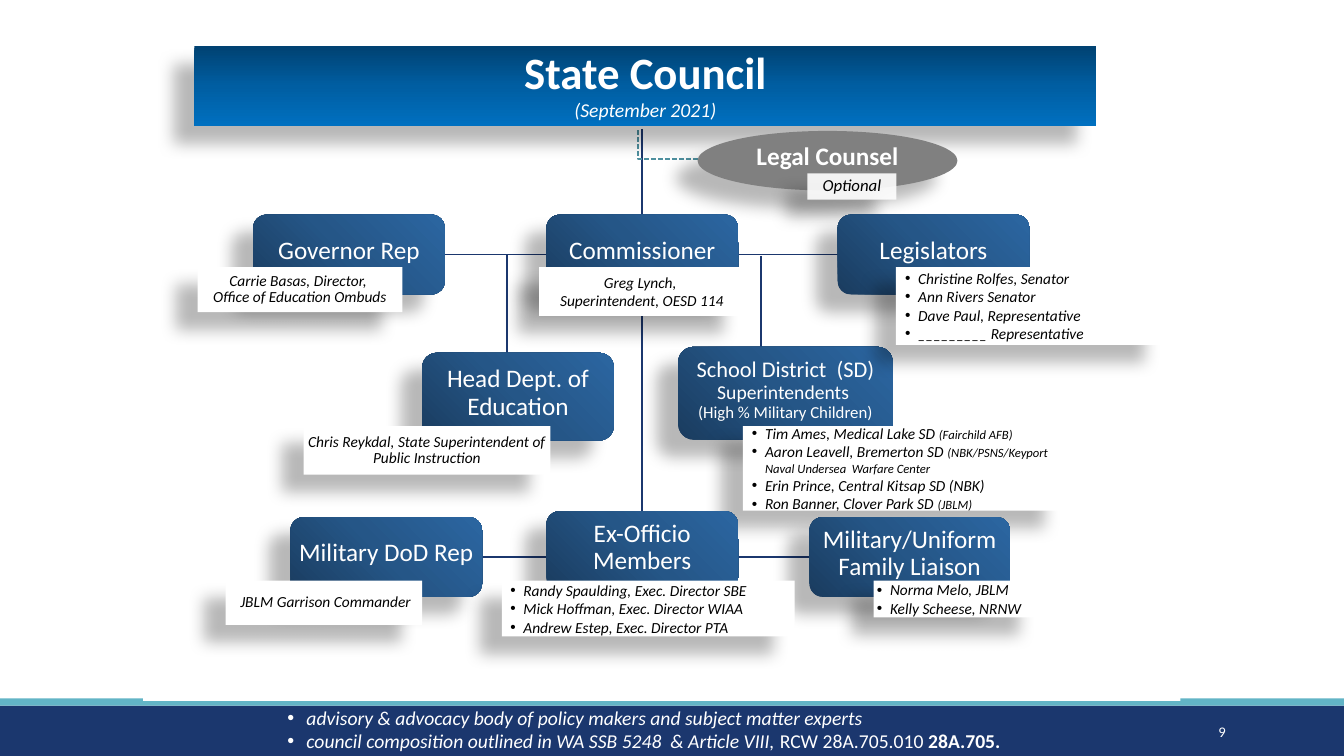
from lxml import etree
from pptx import Presentation
from pptx.dml.color import RGBColor
from pptx.enum import dml, shapes, text
from pptx.oxml import ns
from pptx.util import Cm, Pt

NAVY, TEAL, WHITE, BLACK = "1B376E", "62B4C6", "FFFFFF", "000000"
DEEP = ("004272", "005EA2", "0070C0")
STEEL = ("1A3C5F", "255687", "2B66A1")
WIDE, TALL = 4.83, 2.01
ROW, LOW, SUB, FOOT = 5.41, 13.03, 6.73, 14.63

HEAD = [[("State Council", 32, "b")], [("(September 2021)", 14, "i")]]
DUTY = [
    ["advisory & advocacy body of policy makers and subject matter experts"],
    ["council composition outlined in WA SSB 5248  & Article VIII, ",
     ("RCW 28A.705.010 ", 14, ""), ("28A.705.", 14, "b")],
]

CARDS = [
    ("Head", (10.64, 8.89, WIDE, 2.21), ["Head Dept. of Education"]),
    ("School", (17.09, 8.74, 5.41, 2.34),
     [("School District  (SD) ", 16, ""), ("Superintendents ", 14, ""), "\v",
      ("(High % Military Children)", 12, "")]),
    ("DoD", (7.32, LOW, WIDE, TALL), ["Military DoD Rep"]),
    ("Family", (20.4, LOW, 5.05, TALL), ["Military/Uniform Family Liaison"]),
    ("Members", (13.77, 12.88, WIDE, TALL), ["Ex-Officio Members"]),
    ("Legal", (17.58, 3.3, 6.55, 1.5), [("Legal Counsel", 18, "b")]),
    ("Governor", (6.38, ROW, WIDE, TALL), ["Governor Rep"]),
    ("Chief", (13.77, ROW, WIDE, TALL), ["Commissioner"]),
    ("Law", (21.11, ROW, WIDE, TALL), ["Legislators"]),
]

NOTES = {
    "Head": ((7.65, 10.74, 6.22, 1.22), 0, 0.9,
             [["Chris Reykdal, State Superintendent of Public Instruction"]]),
    "School": ((18.72, 10.74, 8.13, 2.13), 0.48, 1, [
        ["Tim Ames, Medical Lake SD ", ("(Fairchild AFB)", 9, "i")],
        ["Aaron Leavell, Bremerton SD ",
         ("(NBK/PSNS/Keyport Naval Undersea  Warfare Center", 9, "i")],
        ["Erin Prince, Central Kitsap SD (NBK)"],
        ["Ron Banner, Clover Park SD ", ("(JBLM)", 9, "i")]]),
    "DoD": ((5.69, FOOT, 4.95, 1.12), 0, 0.9, [[" JBLM Garrison Commander"]]),
    "Family": ((22.02, FOOT, 4.19, 0.93), 0.33, 1,
               [["Norma Melo, JBLM"], ["Kelly Scheese, NRNW"]]),
    "Members": ((12.65, FOOT, 7.38, 1.41), 0.46, 1, [
        ["Randy Spaulding, Exec. Director SBE"],
        ["Mick Hoffman, Exec. Director WIAA"],
        ["Andrew Estep, Exec. Director PTA"]]),
    "Legal": ((20.35, 4.37, 2.24, 0.66), 0, 0.9, [[("Optional", 12, "i")]]),
    "Governor": ((4.98, SUB, 5.16, 1.14), 0, 0.9,
                 [["Carrie Basas, Director, ", "\v", "Office of Education Ombuds"]]),
    "Chief": ((13.59, SUB, 5.18, 1.23), 0, 1,
              [["Greg Lynch, "], ["Superintendent, OESD 114"]]),
    "Law": ((22.58, SUB, 6.8, 1.96), 0.48, 1, [
        ["Christine Rolfes, Senator"], ["Ann Rivers Senator"],
        ["Dave Paul, Representative"], ["_________ Representative"]]),
}

LINES = [
    (11.86, 14.03, 20.4, 14.03),
    (19.18, 6.45, 19.18, 8.76),
    (12.78, 6.43, 12.78, 9.35),
    (11.2, 6.42, 21.11, 6.42),
    (16.18, 3.25, 16.18, 16),
]
JOINS = [(0, "DoD", "Family"), (3, "Governor", "Law")]


def hue(code):
    return RGBColor.from_string(code)


def sub(node, tag, **attrs):
    return etree.SubElement(node, ns.qn(tag), {k: str(v) for k, v in attrs.items()})


def paint(shape, code):
    shape.fill.solid()
    shape.fill.fore_color.rgb = hue(code)
    shape.line.fill.background()


def blend(shape, codes, angle):
    shape.fill.gradient()
    shape.fill.gradient_angle = 360 - angle
    stops = shape.fill._fill._gradFill.find(ns.qn("a:gsLst"))
    for old in list(stops):
        stops.remove(old)
    for i, code in enumerate(codes):
        sub(sub(stops, "a:gs", pos=i * 50000), "a:srgbClr", val=code)
    shape.line.fill.background()


def shade(shape):
    for old in shape._element.spPr.findall(ns.qn("a:effectLst")):
        shape._element.spPr.remove(old)
    glow = sub(sub(shape._element.spPr, "a:effectLst"), "a:outerShdw", blurRad=Pt(11.8),
               dist=Pt(19.7), dir=141 * 60000, algn="ctr", rotWithShape=0)
    sub(sub(glow, "a:srgbClr", val=BLACK), "a:alpha", val=28000)


def place(shape, spot):
    shape.left, shape.top, shape.width, shape.height = [Cm(v) for v in spot]


def add(kind, spot):
    shape = page.shapes.add_shape(kind, *[Cm(v) for v in spot])
    shape.shadow.inherit = False
    return shape


def inset(frame, side, low):
    frame.margin_left = frame.margin_right = Cm(side)
    frame.margin_top, frame.margin_bottom = Cm(0.03), Cm(low)
    frame.vertical_anchor = text.MSO_ANCHOR.MIDDLE


def write(frame, paras, size, style, code, align, gap=1, dent=0, hang=0.33):
    frame.word_wrap = True
    for i, parts in enumerate(paras):
        para = frame.add_paragraph() if i else frame.paragraphs[0]
        para.alignment, para.line_spacing = align, gap
        para.space_before = Pt(0)
        if dent:
            props = para._p.get_or_add_pPr()
            props.set("marL", str(Cm(dent)))
            props.set("indent", str(-Cm(hang)))
            sub(props, "a:buFont", typeface="Arial")
            sub(props, "a:buChar", char="•")
        for part in parts:
            if part == "\v":
                para.add_line_break()
                continue
            word, points, look = part if isinstance(part, tuple) else (part, size, style)
            run = para.add_run()
            run.text = word
            font = run.font
            font.name, font.size = "Calibri", Pt(points)
            font.bold, font.italic = "b" in look, "i" in look
            font.color.rgb = hue(code)


deck = Presentation()
deck.slide_width, deck.slide_height = Cm(33.87), Cm(19.05)
page = deck.slides.add_slide(deck.slide_layouts[1])
kind, mid, left = shapes.MSO_SHAPE, text.PP_ALIGN.CENTER, text.PP_ALIGN.LEFT

for spot, code in [((0, 17.78, 33.87, 1.27), NAVY), ((0, 17.6, 33.87, 0.18), TEAL),
                   ((3.61, 0.64, 26.14, 17.02), WHITE)]:
    paint(add(kind.RECTANGLE, spot), code)

links = []
for ends in LINES:
    link = page.shapes.add_connector(shapes.MSO_CONNECTOR.STRAIGHT, *[Cm(v) for v in ends])
    link.line.color.rgb, link.line.width = hue(NAVY), Pt(1)
    sub(link._element.spPr, "a:effectLst")
    links.append(link)

pen = page.shapes.build_freeform(Cm(16.08), Cm(3.28))
pen.add_line_segments([(Cm(16.08), Cm(4.01)), (Cm(17.81), Cm(4.01))], close=False)
dash = pen.convert_to_shape()
dash.shadow.inherit = False
dash.fill.background()
dash.line.color.rgb, dash.line.width = hue("4E909F"), Pt(1.25)
dash.line.dash_style = dml.MSO_LINE.SQUARE_DOT

title, body = page.placeholders
tree = title._element.getparent()
tree.append(title._element)
place(title, (4.9, 1.17, 22.73, 2.01))
sub(sub(title._element.spPr, "a:prstGeom", prst="roundRect"), "a:avLst")
blend(title, DEEP, 90)
shade(title)
title.text_frame.auto_size = text.MSO_AUTO_SIZE.NONE
inset(title.text_frame, 0.03, 0.2)
write(title.text_frame, HEAD, 32, "b", WHITE, mid)

boxes = {}
for name, spot, parts in CARDS:
    legal = name == "Legal"
    card = boxes[name] = add(kind.OVAL if legal else kind.ROUNDED_RECTANGLE, spot)
    if legal:
        paint(card, "808080")
    else:
        blend(card, STEEL, 315)
    inset(card.text_frame, 0.03, 0.2)
    write(card.text_frame, [parts], 18, "", WHITE, mid, 0.9)

    spot, dent, gap, paras = NOTES[name]
    note = add(kind.RECTANGLE, spot)
    paint(note, WHITE)
    if legal:
        sub(note._element.spPr.find(".//" + ns.qn("a:srgbClr")), "a:alpha", val=90000)
    inset(note.text_frame, 0.08, 0.03)
    write(note.text_frame, paras, 11, "i", BLACK, left if dent else mid, gap, dent)
    shade(card)
    shade(note)

for i, start, end in JOINS:
    links[i].begin_connect(boxes[start], 3)
    links[i].end_connect(boxes[end], 1)

tree.append(body._element)
place(body, (6.99, 17.65, 22.3, 1.45))
body.text_frame.auto_size = text.MSO_AUTO_SIZE.SHAPE_TO_FIT_TEXT
write(body.text_frame, DUTY, 14, "i", WHITE, left, 1, 0.48, 0.48)

count = page.shapes.add_textbox(Cm(27.51), Cm(17.93), Cm(3.63), Cm(1.02))
count.text_frame.vertical_anchor = text.MSO_ANCHOR.MIDDLE
write(count.text_frame, [["9"]], 10.5, "", WHITE, text.PP_ALIGN.RIGHT)

deck.save("out.pptx")
